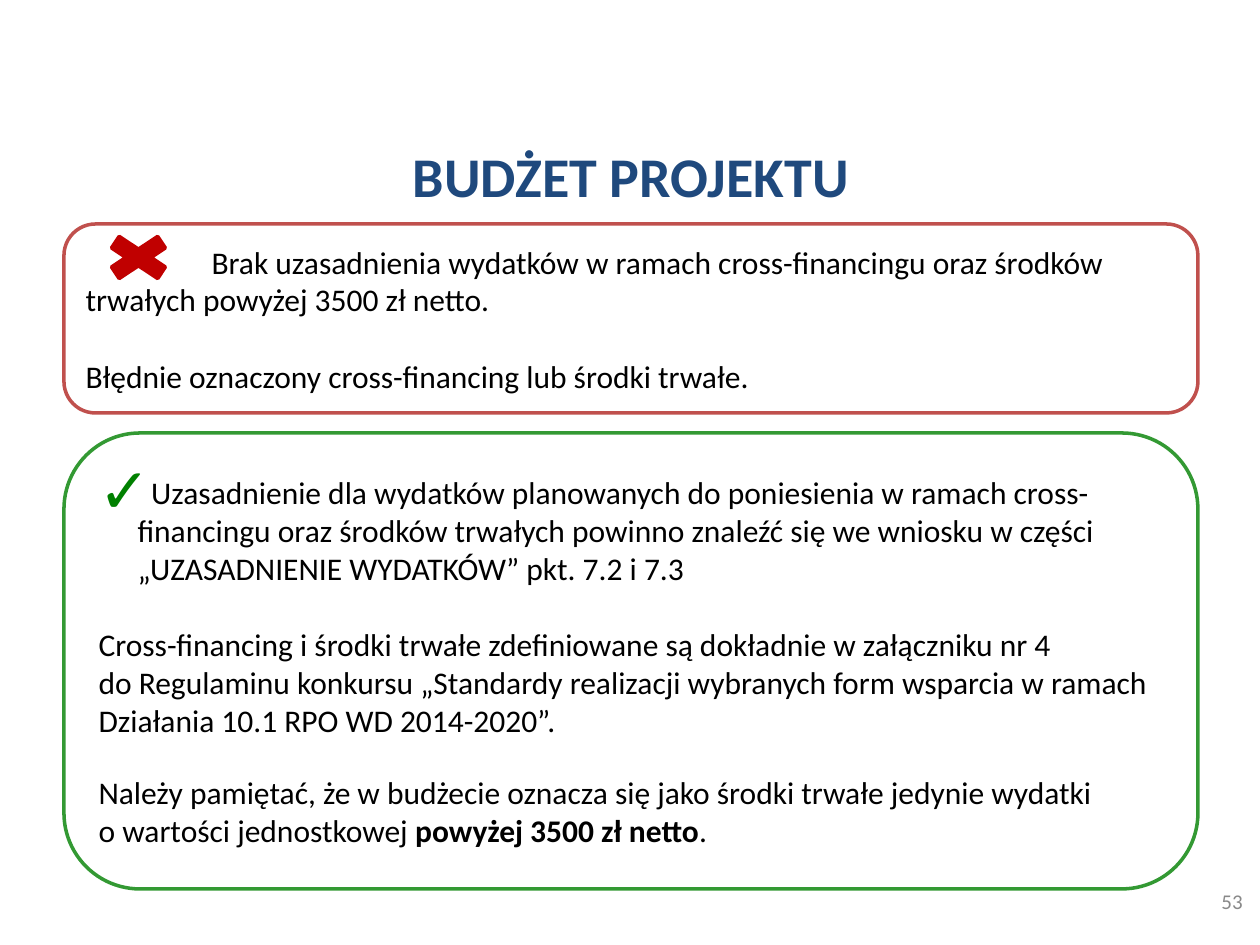
from lxml.etree import SubElement
from pptx import Presentation
from pptx.dml.color import RGBColor
from pptx.enum.shapes import MSO_SHAPE as Shape
from pptx.enum.text import MSO_ANCHOR as Anchor, PP_ALIGN as Align
from pptx.oxml.ns import qn
from pptx.util import Pt

EMU_PER_PX = 914400 / 126
NAVY = RGBColor(0x1F, 0x49, 0x7D)
RED = RGBColor(0xC0, 0x50, 0x4D)
DARK_RED = RGBColor(0xC0, 0x00, 0x00)
GREEN = RGBColor(0x33, 0x99, 0x33)
TICK_GREEN = RGBColor(0x00, 0x80, 0x00)
BLACK = RGBColor(0x00, 0x00, 0x00)
GRAY = RGBColor(0x89, 0x89, 0x89)

MISTAKES = [
    (0, "Brak uzasadnienia wydatków w ramach cross-financingu oraz środków "
        "trwałych powyżej 3500 zł netto."),
    (22, "Błędnie oznaczony cross-financing lub środki trwałe."),
]
ADVICE = [
    (0, "Uzasadnienie dla wydatków planowanych do poniesienia w ramach "
        "cross-financingu oraz środków trwałych powinno znaleźć się we wniosku "
        "w części „UZASADNIENIE WYDATKÓW” pkt. 7.2 i 7.3"),
    (22, "Cross-financing i środki trwałe zdefiniowane są dokładnie w załączniku nr 4 \v"
         "do Regulaminu konkursu „Standardy realizacji wybranych form wsparcia "
         "w ramach Działania 10.1 RPO WD 2014-2020”."),
    (19.5, "Należy pamiętać, że w budżecie oznacza się jako środki trwałe jedynie "
           "wydatki \vo wartości jednostkowej "),
]


def px(*lengths):
    return [round(length * EMU_PER_PX) for length in lengths]


def style(para, size, color, align, bold=False):
    para.alignment = align
    font = para.font
    font.name = "Calibri"
    font.size = Pt(size)
    font.bold = bold
    font.color.rgb = color


def add_label(page, place, text, size, color, align, bold=False):
    frame = page.shapes.add_textbox(*px(*place)).text_frame
    frame.word_wrap = True
    frame.vertical_anchor = Anchor.MIDDLE
    para = frame.paragraphs[0]
    para.text = text
    style(para, size, color, align, bold)


def add_outlined(page, kind, place, line_color):
    box = page.shapes.add_shape(kind, *px(*place))
    box.shadow.inherit = False
    box.fill.background()
    box.line.color.rgb = line_color
    box.line.width = Pt(2)
    return box


def set_indent(para, left, first):
    props = para._p.get_or_add_pPr()
    margin, indent = px(left, first)
    props.set("marL", str(margin))
    props.set("indent", str(indent))


def add_tick(para):
    props = para._p.get_or_add_pPr()
    color = SubElement(props, qn("a:buClr"))
    SubElement(color, qn("a:srgbClr"), val=str(TICK_GREEN))
    SubElement(props, qn("a:buSzPct"), val="200000")
    SubElement(props, qn("a:buFont"), typeface="Calibri")
    SubElement(props, qn("a:buChar"), char="✓")


def add_panel(page, place, line_color, items, left, first, ticked=False):
    frame = add_outlined(page, Shape.ROUNDED_RECTANGLE, place, line_color).text_frame
    frame.word_wrap = True
    frame.vertical_anchor = Anchor.MIDDLE
    for index, (gap, text) in enumerate(items):
        para = frame.add_paragraph() if index else frame.paragraphs[0]
        para.text = text
        if gap:
            para.space_before = Pt(gap)
        if index == 0:
            set_indent(para, left, first)
            if ticked:
                add_tick(para)
        style(para, 18, BLACK, Align.LEFT)
    return frame


def add_ending(para):
    for text, bold in (("powyżej 3500 zł netto", True), (".", False)):
        span = para.add_run()
        span.text = text
        span.font.bold = bold


def main():
    deck = Presentation()
    deck.slide_width, deck.slide_height = px(1260, 945)
    page = deck.slides.add_slide(deck.slide_layouts[6])
    add_label(page, (64, 145, 1134, 60), "BUDŻET PROJEKTU", 32, NAVY, Align.CENTER, True)
    add_panel(page, (64, 224, 1134, 189), RED, MISTAKES, 0, 126)
    advice = add_panel(page, (64, 433, 1134, 456), GREEN, ADVICE, 39, -39, ticked=True)
    add_ending(advice.paragraphs[-1])
    cross = add_outlined(page, Shape.MATH_MULTIPLY, (94, 228, 89, 59), DARK_RED)
    cross.fill.solid()
    cross.fill.fore_color.rgb = DARK_RED
    add_label(page, (961, 876, 294, 50), "53", 12, GRAY, Align.RIGHT)
    deck.save("out.pptx")


if __name__ == "__main__":
    main()
